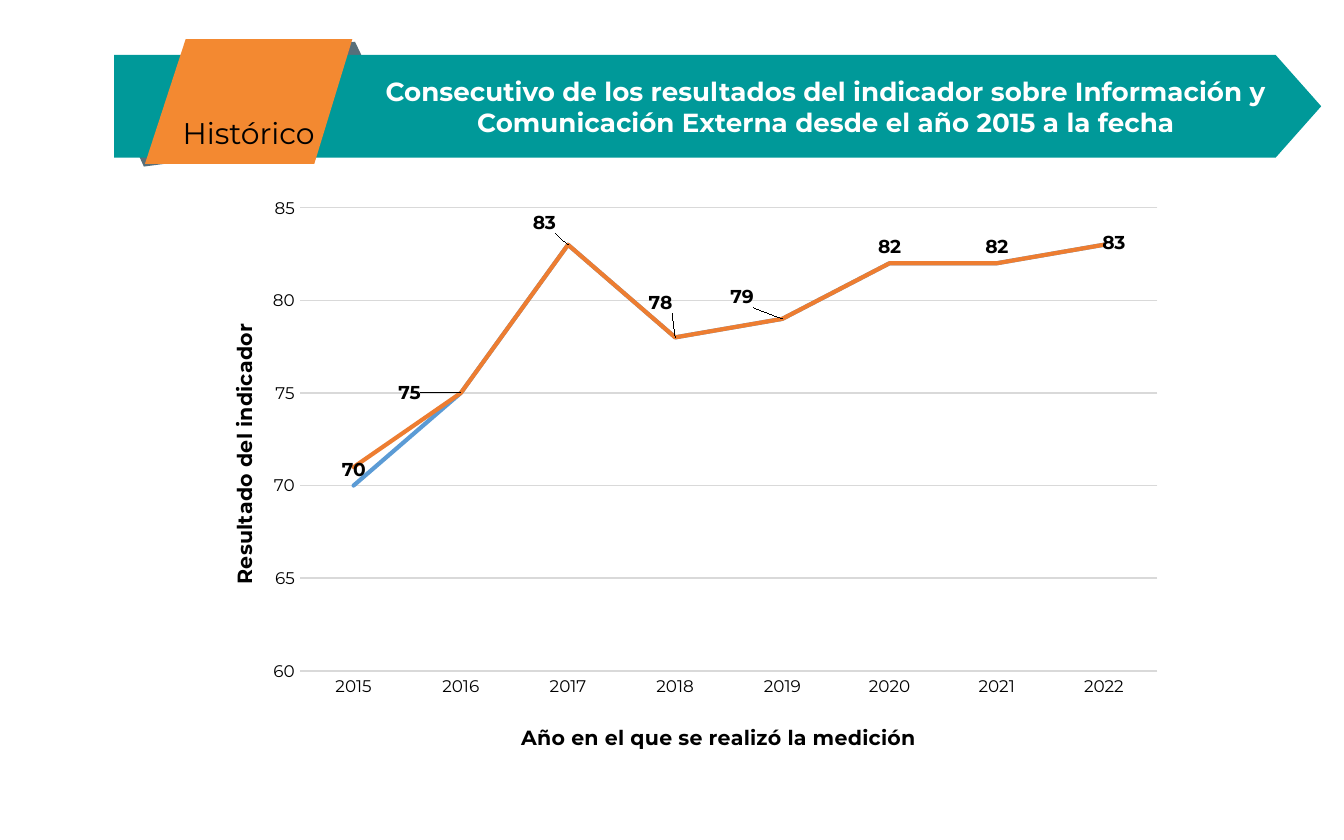
from lxml import etree
from pptx import Presentation
from pptx.chart.data import CategoryChartData as ChartData
from pptx.dml.color import RGBColor as RGB
from pptx.enum.chart import XL_CHART_TYPE as Kind, XL_LABEL_POSITION as Pos, XL_TICK_MARK as Tick
from pptx.enum.text import MSO_ANCHOR as Anchor, PP_ALIGN as Align
from pptx.oxml.ns import qn
from pptx.util import Cm, Pt

FACE = "Montserrat"
GREY, TEAL, ORANGE = "576F7A", "009999", "F38931"
RULE = "D9D9D9"
YEARS = [str(year) for year in range(2015, 2023)]
SCORES = [70, 75, 83, 78, 79, 82, 82, 83]
SHIFTS = {1: (-0.052, 0.027), 2: (-0.024, -0.01), 3: (-0.015, -0.032),
          4: (-0.041, -0.01), 7: (0.01, 0.024)}
FOLDS = [
    [(455, 5), (325, 18), (325, 74), (488, 74)],
    [(25, 173), (56, 241), (185, 224), (185, 173)],
]
BAND = [(0, 30), (0, 224), (2195, 224), (2281, 127), (2195, 30)]
TAB = [(135, 0), (58, 236), (378, 236), (450, 0)]


def paint(fmt, color):
    """Give a fill or a line format a solid colour."""
    fill = getattr(fmt, "fill", fmt)
    fill.solid()
    fill.fore_color.rgb = RGB.from_string(color)


def style(font, size, color="000000", bold=False):
    """Set face, size, colour and weight of a font."""
    font.name, font.size, font.bold = FACE, Pt(size), bold
    paint(font, color)


def write(shape, text, size, color, bold, anchor):
    """Write one centred run into a shape."""
    frame = shape.text_frame
    frame.word_wrap = True
    frame.vertical_anchor = anchor
    frame.margin_left = frame.margin_right = Cm(0.25)
    frame.margin_top = frame.margin_bottom = Cm(0.25)
    par = frame.paragraphs[0]
    par.alignment = Align.CENTER
    run = par.add_run()
    run.text = text
    style(run.font, size, color, bold)


def outline(slide, left, top, points, color):
    """Draw a closed polygon from points in hundredths of a centimetre."""
    pen = slide.shapes.build_freeform(*points[0], scale=Cm(0.01))
    pen.add_line_segments(points[1:], close=True)
    shape = pen.convert_to_shape(left, top)
    shape.shadow.inherit = False
    paint(shape.fill, color)
    shape.line.fill.background()
    return shape


def banner(slide, left, top):
    """Place the arrow band, its folded tab and the heading."""
    for fold in FOLDS:
        outline(slide, left, top, fold, GREY)
    outline(slide, left, top, BAND, TEAL)
    tab = outline(slide, left, top, TAB, ORANGE)
    write(tab, "Histórico", 16, "000000", False, Anchor.BOTTOM)
    head = slide.shapes.add_textbox(left + Cm(4.52), top + Cm(0.64), Cm(17.86), Cm(1.27))
    write(head, "Consecutivo de los resultados del indicador sobre Información y "
          "Comunicación Externa desde el año 2015 a la fecha",
          14, "FFFFFF", True, Anchor.MIDDLE)


def layout(parent, index, **parts):
    """Put a manual layout at an index among the children of a chart element."""
    for old in parent.findall(qn("c:layout")):
        parent.remove(old)
    node = etree.Element(qn("c:layout"))
    manual = etree.SubElement(node, qn("c:manualLayout"))
    for name, value in parts.items():
        etree.SubElement(manual, qn("c:" + name)).set("val", str(value))
    parent.insert(index, node)


def set_axis(axis, title, x, y):
    """Style an axis and place its title at a fraction of the chart."""
    run = axis.axis_title.text_frame.paragraphs[0].add_run()
    run.text = title
    style(run.font, 11, bold=True)
    layout(axis.axis_title._element, 1, xMode="edge", yMode="edge", x=x, y=y)
    axis.major_tick_mark = axis.minor_tick_mark = Tick.NONE
    style(axis.tick_labels.font, 9)


def set_labels(series):
    """Show bold values above the points and shift some of them."""
    labels = series.data_labels
    labels.show_value = True
    labels.position = Pos.ABOVE
    style(labels.font, 10, bold=True)
    for idx, (x, y) in SHIFTS.items():
        label = series.points[idx].data_label
        style(label.font, 10, bold=True)
        label.position = Pos.ABOVE
        layout(label._dLbl, 1, x=x, y=y)


def history(slide, left, top, width, height):
    """Place the line chart of yearly results."""
    data = ChartData()
    data.categories = YEARS
    data.add_series("Series 1", SCORES)
    data.add_series("Series 2", [1] + [None] * (len(YEARS) - 1))
    chart = slide.shapes.add_chart(Kind.LINE_STACKED, left, top, width, height, data).chart
    chart.has_title = chart.has_legend = False
    style(chart.font, 10)
    root = chart._chartSpace.chart
    root.find(qn("c:dispBlanksAs")).set("val", "zero")
    layout(root.plotArea, 0, layoutTarget="inner", xMode="edge", yMode="edge",
           x=0.112, y=0.036, w=0.868, h=0.791)
    plot = chart.plots[0]
    plot.vary_by_categories = False
    for series, color in zip(plot.series, ("5B9BD5", "ED7D31")):
        series.smooth = False
        series.format.line.width = Pt(2.25)
        paint(series.format.line, color)
        series.format.line._ln.set("cap", "rnd")
    set_labels(plot.series[0])
    cat, val = chart.category_axis, chart.value_axis
    set_axis(cat, "Año en el que se realizó la medición", 0.332, 0.908)
    set_axis(val, "Resultado del indicador", 0.036, 0.227)
    val.minimum_scale, val.maximum_scale, val.major_unit = 60, 85, 5
    val.format.line.fill.background()
    for line in (cat.format.line, val.major_gridlines.format.line):
        line.width = Pt(0.75)
        paint(line, RULE)


def main():
    """Build and save the slide."""
    deck = Presentation()
    deck.slide_width, deck.slide_height = Cm(25.4), Cm(15.88)
    slide = deck.slides.add_slide(deck.slide_layouts[6])
    banner(slide, Cm(2.16), Cm(0.74))
    history(slide, Cm(3.58), Cm(3.53), Cm(18.67), Cm(11.07))
    deck.save("out.pptx")


if __name__ == "__main__":
    main()
